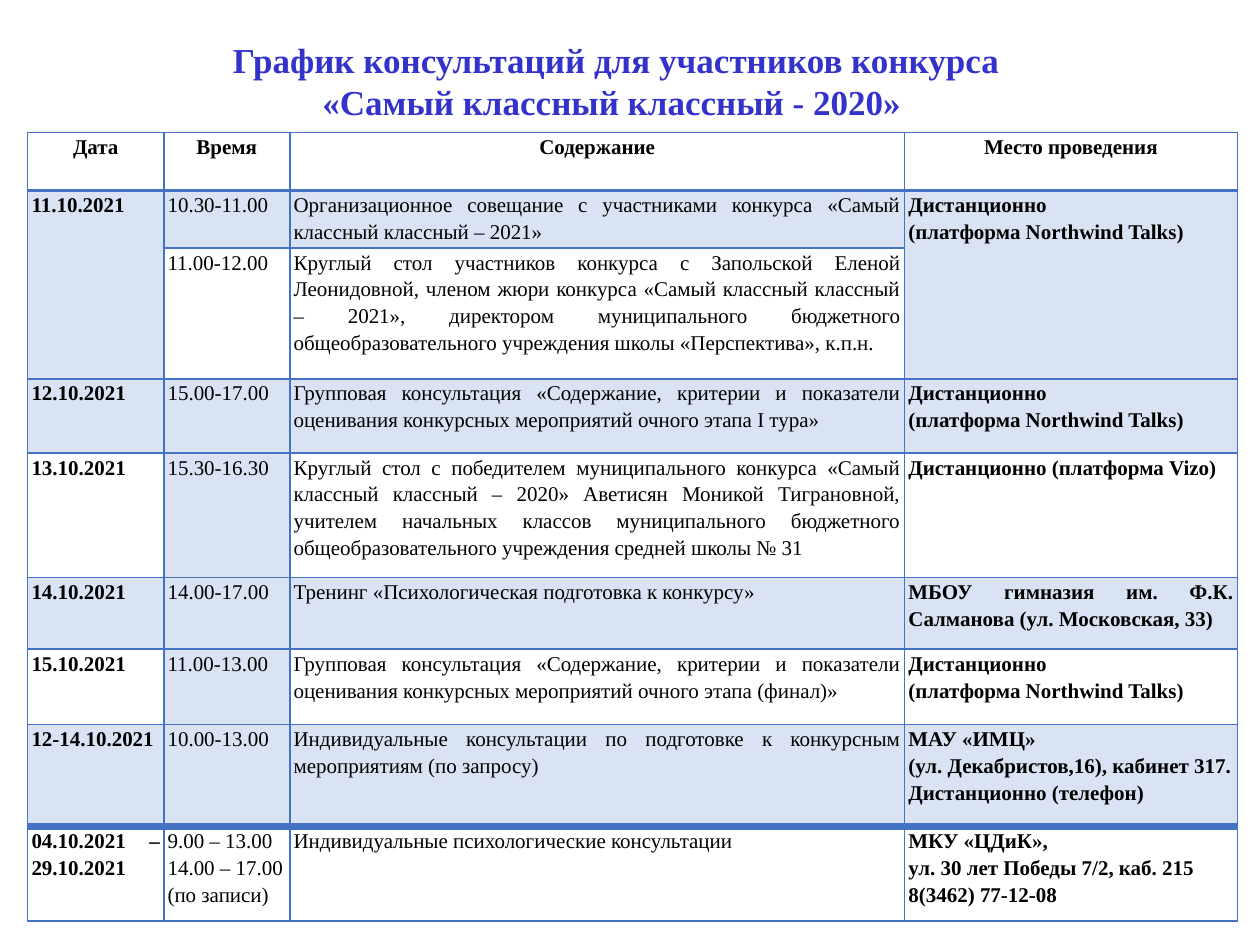
import pptx
import pptx.util
import pptx.dml.color
import pptx.enum.text
import pptx.oxml
import pptx.oxml.ns
from pptx.util import Inches

FONT = "Times New Roman"
BLUE = "4472C4"
BAND = "DAE3F3"
WHITE = "FFFFFF"
ALIGN = pptx.enum.text.PP_ALIGN
ANCHOR = pptx.enum.text.MSO_ANCHOR

HEADINGS = ("Дата", "Время", "Содержание", "Место проведения")
ONLINE = "Дистанционно\n(платформа Northwind Talks)"
SESSIONS = [
    ("11.10.2021", "10.30-11.00",
     "Организационное совещание с участниками конкурса «Самый классный классный – 2021»",
     ONLINE),
    ("", "11.00-12.00",
     "Круглый стол участников конкурса с Запольской Еленой Леонидовной, членом жюри "
     "конкурса «Самый классный классный – 2021», директором муниципального бюджетного "
     "общеобразовательного учреждения школы «Перспектива», к.п.н.",
     ""),
    ("12.10.2021", "15.00-17.00",
     "Групповая консультация «Содержание, критерии и показатели оценивания конкурсных "
     "мероприятий очного этапа I тура»",
     ONLINE),
    ("13.10.2021", "15.30-16.30",
     "Круглый стол с победителем муниципального конкурса «Самый классный классный – 2020» "
     "Аветисян Моникой Тиграновной, учителем начальных классов муниципального бюджетного "
     "общеобразовательного учреждения средней школы № 31",
     "Дистанционно (платформа Vizo)"),
    ("14.10.2021", "14.00-17.00",
     "Тренинг «Психологическая подготовка к конкурсу»",
     "МБОУ гимназия им. Ф.К. Салманова (ул. Московская, 33)"),
    ("15.10.2021", "11.00-13.00",
     "Групповая консультация «Содержание, критерии и показатели оценивания конкурсных "
     "мероприятий очного этапа (финал)»",
     ONLINE),
    ("12-14.10.2021", "10.00-13.00",
     "Индивидуальные консультации по подготовке к конкурсным мероприятиям (по запросу)",
     "МАУ «ИМЦ»\n(ул. Декабристов,16), кабинет 317.\nДистанционно (телефон)"),
    ("04.10.2021 – 29.10.2021", "9.00 – 13.00\n14.00 – 17.00\n(по записи)",
     "Индивидуальные психологические консультации",
     "МКУ «ЦДиК»,\nул. 30 лет Победы 7/2, каб. 215\n8(3462) 77-12-08"),
]
COLUMN_WIDTHS = (1.08, 1, 4.88, 2.64)
ROW_HEIGHTS = (0.46, 0.46, 1.04, 0.59, 0.99, 0.57, 0.6, 0.81, 0.75)
BANDED_COLUMNS = {1: (0, 1, 2, 3), 2: (0, 3), 3: (0, 1, 2, 3), 4: (1,),
                  5: (0, 1, 2, 3), 6: (1,), 7: (0, 1, 2, 3)}
RULE_WIDTHS = {1: 2, 8: 4}


def color(value):
    """Return the colour for a hex string."""
    return pptx.dml.color.RGBColor.from_string(value)


def write(frame, text, size=12, bold=False, ink="000000", align=ALIGN.JUSTIFY, spacing=1.15):
    """Fill a text frame, one paragraph for each line of text."""
    frame.word_wrap = True
    frame.text = text
    for paragraph in frame.paragraphs:
        paragraph.alignment = align
        paragraph.line_spacing = spacing
        paragraph.font.name = FONT
        paragraph.font.size = pptx.util.Pt(size)
        paragraph.font.bold = bold
        paragraph.font.color.rgb = color(ink)


def set_borders(cell, top, bottom):
    """Draw the four borders of a cell, with widths in points."""
    properties = cell._tc.get_or_add_tcPr()
    for side, width in (("L", 1), ("R", 1), ("T", top), ("B", bottom)):
        properties.append(pptx.oxml.parse_xml(
            f'<a:ln{side} {pptx.oxml.ns.nsdecls("a")} w="{pptx.util.Pt(width)}">'
            f'<a:solidFill><a:srgbClr val="{BLUE}"/></a:solidFill></a:ln{side}>'))


def add_title(slide, left, top, width, height):
    """Place the heading in the title placeholder."""
    title = slide.shapes.title
    title.left, title.top, title.width, title.height = left, top, width, height
    title.text_frame.vertical_anchor = ANCHOR.MIDDLE
    write(title.text_frame,
          "График консультаций для участников конкурса\v«Самый классный классный - 2020» ",
          size=20, bold=True, ink="3333CC", align=ALIGN.CENTER, spacing=1)


def add_schedule(slide, left, top, width, height):
    """Place the consultation table, scaled to its box."""
    entries = [HEADINGS, *SESSIONS]
    table = slide.shapes.add_table(len(entries), len(HEADINGS), left, top, width, height).table
    table.first_row = table.horz_banding = False
    for column, share in zip(table.columns, COLUMN_WIDTHS):
        column.width = int(width * share / sum(COLUMN_WIDTHS))
    for row, share in zip(table.rows, ROW_HEIGHTS):
        row.height = int(height * share / sum(ROW_HEIGHTS))
    for r, entry in enumerate(entries):
        for c, text in enumerate(entry):
            cell = table.cell(r, c)
            cell.margin_left = cell.margin_right = Inches(0.03)
            cell.margin_top = cell.margin_bottom = 0
            cell.vertical_anchor = ANCHOR.TOP
            set_borders(cell, RULE_WIDTHS.get(r, 1), RULE_WIDTHS.get(r + 1, 1))
            cell.fill.solid()
            cell.fill.fore_color.rgb = color(BAND if c in BANDED_COLUMNS.get(r, ()) else WHITE)
            write(cell.text_frame, text, bold=r == 0 or c in (0, 3),
                  align=ALIGN.CENTER if r == 0 else ALIGN.JUSTIFY)
    for c in (0, 3):
        table.cell(1, c).merge(table.cell(2, c))


def main():
    """Build and save the schedule slide."""
    deck = pptx.Presentation()
    deck.slide_width, deck.slide_height = Inches(10), Inches(7.5)
    slide = deck.slides.add_slide(deck.slide_layouts[5])
    add_title(slide, Inches(0.72), Inches(0.25), Inches(8.34), Inches(0.77))
    add_schedule(slide, Inches(0.22), Inches(1.05), Inches(9.6), Inches(6.26))
    deck.save("out.pptx")


if __name__ == "__main__":
    main()
